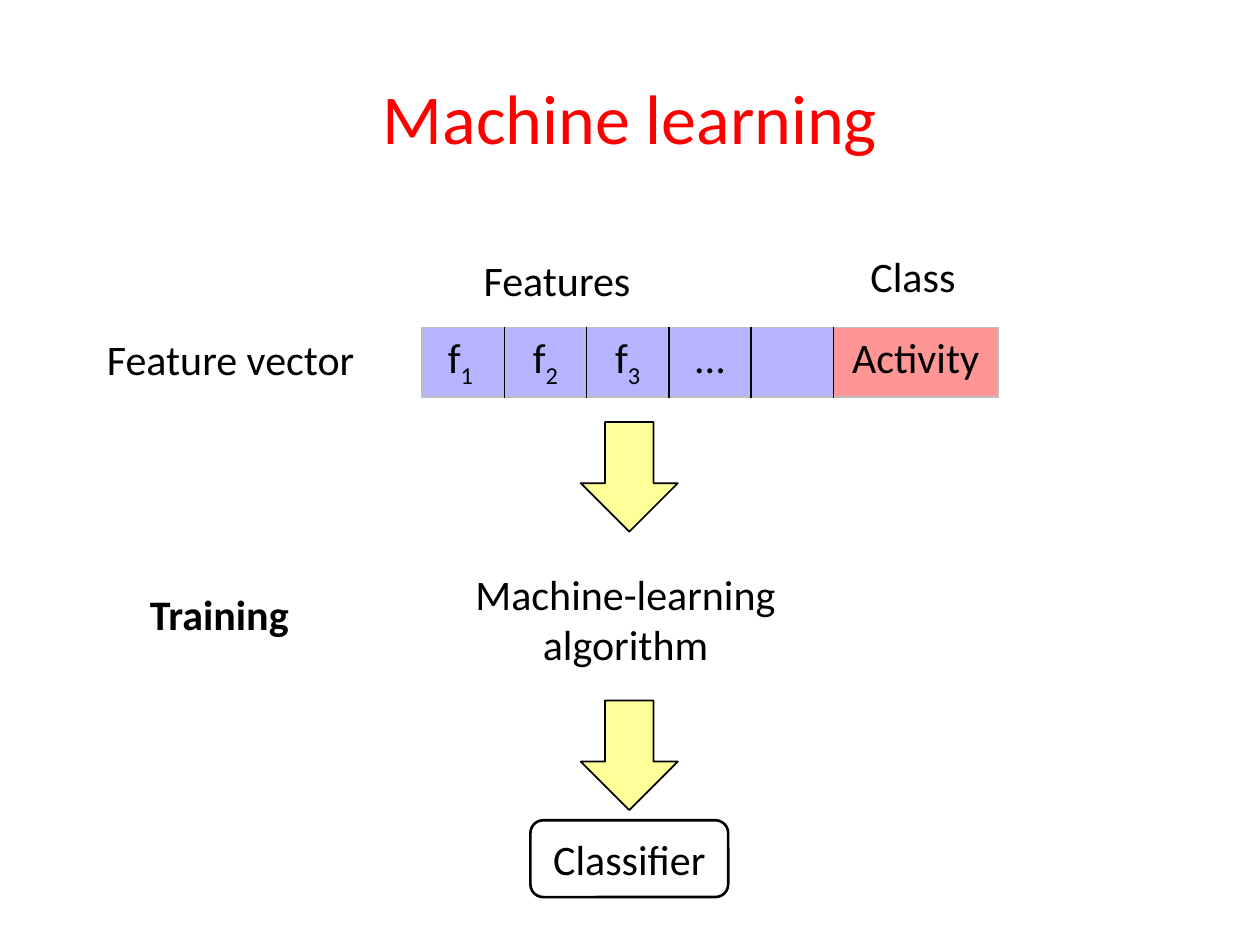
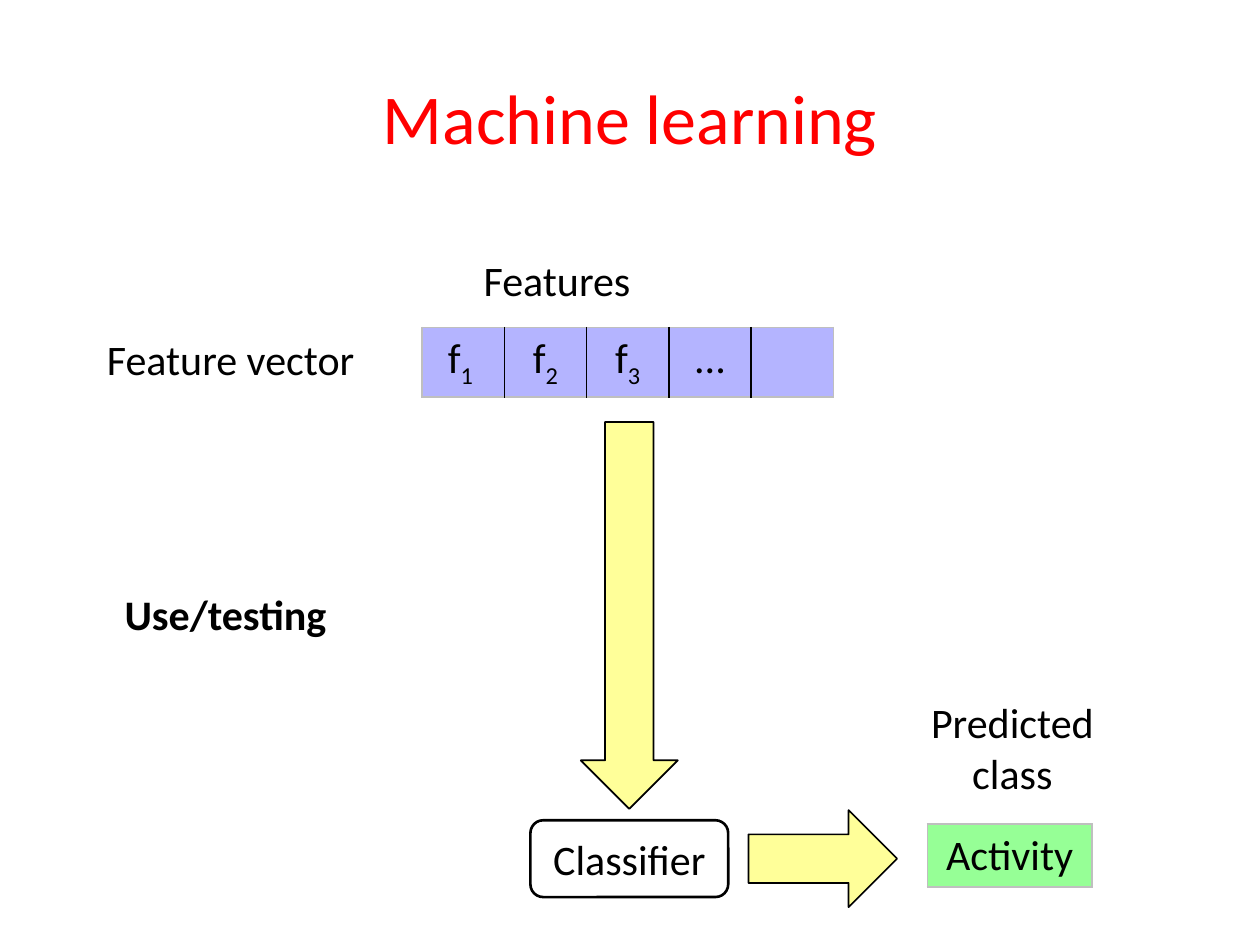
from lxml import etree
from pptx import Presentation
from pptx.dml.color import RGBColor
from pptx.enum import shapes, text
from pptx.oxml import ns
from pptx.util import Inches, Pt

FONT = "Calibri"
BLACK, RED, GRAY = "000000", "FF0000", "BFBFBF"
BLUE, PINK, GREEN, YELLOW = "B4B4FF", "FF9696", "96FF96", "FFFF99"
LEFT, MID = text.PP_ALIGN.LEFT, text.PP_ALIGN.CENTER
FORM = shapes.MSO_SHAPE
CELL = 0.653
FEATURES = [(label, BLUE, CELL) for label in ("f_1 ", "f_2", "f_3", "...", "")]


def color(code):
    return RGBColor.from_string(code)


def write(frame, words, size=24, ink=BLACK, bold=False, align=MID):
    """Fill a frame: newline splits paragraphs, \\v breaks a line, _ starts a subscript."""
    for i, line in enumerate(words.split("\n")):
        para = frame.paragraphs[0] if i == 0 else frame.add_paragraph()
        base, _, sub = line.partition("_")
        para.text = base
        para.alignment = align
        if sub:
            run = para.add_run()
            run.text = sub
            run.font._element.set("baseline", "-25000")
        for run in para.runs:
            font = run.font
            font.name, font.size, font.bold = FONT, Pt(size), bold
            font.color.rgb = color(ink)


def border(cell, side, ink):
    """Return nothing; draw one side (L, R, T or B) of a cell, before its fill is set."""
    line = etree.SubElement(cell._tc.get_or_add_tcPr(), ns.qn(f"a:ln{side}"), w=str(Pt(1)))
    fill = etree.SubElement(line, ns.qn("a:solidFill"))
    etree.SubElement(fill, ns.qn("a:srgbClr"), val=ink)


class Deck:
    def __init__(self):
        self.prs = Presentation()
        self.prs.slide_width, self.prs.slide_height = Inches(10), Inches(7.5)
        self.slide = None

    def page(self, title):
        self.slide = self.prs.slides.add_slide(self.prs.slide_layouts[5])
        head = self.slide.shapes.title
        head.left, head.top = Inches(0.5), Inches(0.3)
        head.width, head.height = Inches(9), Inches(1.25)
        head.text_frame.vertical_anchor = text.MSO_ANCHOR.MIDDLE
        write(head.text_frame, title, size=40, ink=RED)

    def label(self, words, x, y, w, h=0.5, **style):
        box = self.slide.shapes.add_textbox(Inches(x), Inches(y), Inches(w), Inches(h))
        frame = box.text_frame
        frame.word_wrap = False
        frame.auto_size = text.MSO_AUTO_SIZE.SHAPE_TO_FIT_TEXT
        write(frame, words, **{"align": LEFT, **style})

    def shape(self, form, x, y, w, h, fill=None, width=1):
        item = self.slide.shapes.add_shape(form, Inches(x), Inches(y), Inches(w), Inches(h))
        item.shadow.inherit = False
        if fill:
            item.fill.solid()
            item.fill.fore_color.rgb = color(fill)
        else:
            item.fill.background()
        item.line.color.rgb = color(BLACK)
        item.line.width = Pt(width)
        return item

    def down(self, y, length):
        self.shape(FORM.DOWN_ARROW, 4.61, y, 0.77, length, YELLOW)

    def vector(self, cells, x, y):
        """Add a one-row table from (words, fill, width) cells."""
        total = sum(width for _, _, width in cells)
        grid = self.slide.shapes.add_table(
            1, len(cells), Inches(x), Inches(y), Inches(total), Inches(0.5)).table
        last = len(cells) - 1
        for i, (words, fill, width) in enumerate(cells):
            grid.columns[i].width = Inches(width)
            cell = grid.cell(0, i)
            border(cell, "L", BLACK if i else GRAY)
            border(cell, "R", BLACK if i < last else GRAY)
            border(cell, "T", GRAY)
            border(cell, "B", GRAY)
            cell.fill.solid()
            cell.fill.fore_color.rgb = color(fill)
            write(cell.text_frame, words)

    def base(self, cells):
        """Add the title, feature vector and classifier that both slides share."""
        self.page("Machine learning")
        self.vector(cells, 3.35, 2.6)
        self.label("Feature vector", 0.75, 2.6, 2.19)
        self.label("Features", 3.74, 1.97, 1.38)
        box = self.shape(FORM.ROUNDED_RECTANGLE, 4.21, 6.51, 1.57, 0.61, width=1.5)
        box.text_frame.word_wrap = False
        box.text_frame.vertical_anchor = text.MSO_ANCHOR.MIDDLE
        write(box.text_frame, "Classifier")


def train(deck):
    deck.base(FEATURES + [("Activity", PINK, 2 * CELL)])
    deck.label("Class", 6.81, 1.94, 0.88)
    deck.down(3.35, 0.87)
    deck.label("Machine-learning\valgorithm", 3.66, 4.46, 2.61, 0.91, align=MID)
    deck.down(5.56, 0.87)
    deck.label("Training", 1.09, 4.62, 1.32, bold=True)


def test(deck):
    deck.base(FEATURES)
    deck.down(3.35, 3.07)
    deck.label("Use/testing", 0.89, 4.62, 1.83, bold=True)
    deck.vector([("Activity", GREEN, 2 * CELL)], 7.36, 6.54)
    deck.label("Predicted\nclass", 7.28, 5.48, 1.51, 0.91, align=MID)
    deck.shape(FORM.RIGHT_ARROW, 5.94, 6.43, 1.18, 0.77, YELLOW)


def main():
    deck = Deck()
    train(deck)
    test(deck)
    deck.prs.save("out.pptx")


if __name__ == "__main__":
    main()
